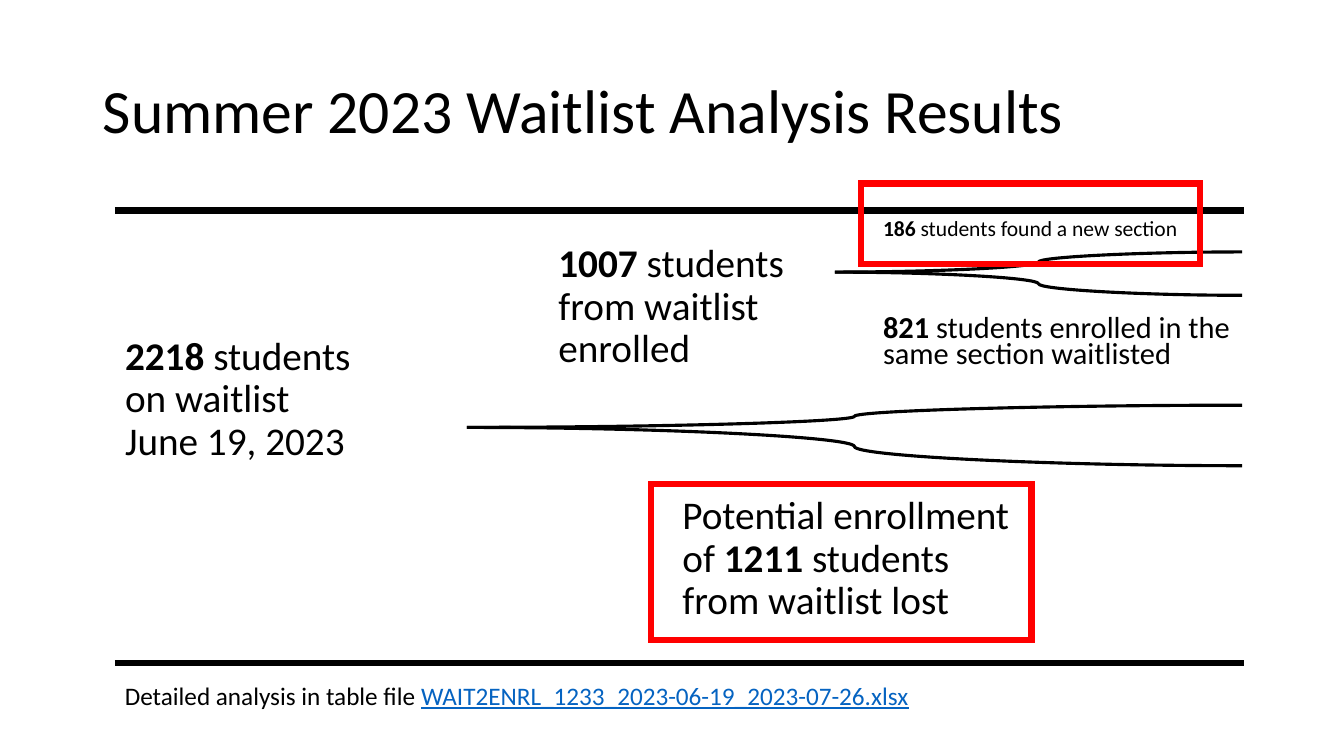
from lxml import etree
from pptx import Presentation
from pptx.dml.color import RGBColor
from pptx.enum.shapes import MSO_CONNECTOR, MSO_SHAPE
from pptx.enum.text import MSO_ANCHOR, MSO_AUTO_SIZE, PP_ALIGN
from pptx.oxml.ns import qn
from pptx.util import Inches, Pt

LINE, CURVE = MSO_CONNECTOR.STRAIGHT, MSO_CONNECTOR.CURVE
RECT = MSO_SHAPE.RECTANGLE
TOP, MIDDLE = MSO_ANCHOR.TOP, MSO_ANCHOR.MIDDLE
LEFT, FIXED = PP_ALIGN.LEFT, MSO_AUTO_SIZE.NONE
FONT = "Calibri"
COLORS = {"ink": "000000", "mark": "FF0000", "link": "0563C1"}


def color(name):
    return RGBColor.from_string(COLORS[name])


def apply(target, values):
    for name, value in values.items():
        setattr(target, name, value)


def place(shape, box):
    names = ("left", "top", "width", "height")
    apply(shape, dict(zip(names, map(Inches, box))))


def write(shape, runs, size, spacing=0.9, before=10, anchor=TOP):
    frame = shape.text_frame
    apply(frame, {"word_wrap": True, "auto_size": FIXED,
                  "vertical_anchor": anchor})
    para = frame.paragraphs[0]
    apply(para, {"alignment": LEFT, "line_spacing": spacing,
                 "space_before": Pt(before)})
    for text, style in runs:
        run = para.add_run()
        run.text = text
        apply(run.font, {"name": FONT, "size": Pt(size),
                         "bold": style == "bold",
                         "underline": style == "link"})
        run.font.color.rgb = color("link" if style == "link" else "ink")


def note(slide, box, runs, size, spacing=0.9, before=10):
    shape = slide.shapes.add_textbox(*map(Inches, box))
    write(shape, runs, size, spacing, before)


def stroke(slide, kind, start, end, weight):
    line = slide.shapes.add_connector(kind, *map(Inches, start + end))
    line.line.color.rgb = color("ink")
    line.line.width = Pt(weight)
    etree.SubElement(line._element.spPr, qn("a:effectLst"))


def fork(slide, box, split):
    left, top, width, height = box
    for end in (top, top + height):
        stroke(slide, CURVE, (left, top + split), (left + width, end), 2.25)


def mark(slide, box):
    frame = slide.shapes.add_shape(RECT, *map(Inches, box))
    frame.shadow.inherit = False
    frame.fill.background()
    frame.line.color.rgb = color("mark")
    frame.line.width = Pt(4.5)
    edge = frame._element.spPr.find(qn("a:ln"))
    etree.SubElement(edge, qn("a:miter")).set("lim", "800000")


def head(slide, box):
    title = slide.shapes.title
    place(title, box)
    write(title, [("Summer 2023 Waitlist Analysis Results", "plain")],
          44, before=0, anchor=MIDDLE)


def total(slide, box):
    body = slide.placeholders[1]
    place(body, box)
    write(body, [("2218 ", "bold"),
                 ("students on waitlist June 19, 2023", "plain")], 28)
    props = body.text_frame.paragraphs[0]._p.get_or_add_pPr()
    props.set("marL", "0")
    props.set("indent", "0")
    etree.SubElement(props, qn("a:buNone"))


def rules(slide, box):
    left, top, width, height = box
    for y in (top, top + height):
        stroke(slide, LINE, (left, y), (left + width, y), 4.5)


def gained(slide, box):
    left, top, width, height = box
    note(slide, (left, top + 0.22, 2.59, 1.46),
         [("1007 ", "bold"), ("students from waitlist enrolled", "plain")], 28)
    fork(slide, (left + 2.84, top + 0.35, width - 2.84, 0.43), 0.2)
    note(slide, (left + 3.22, top, 3.58, 0.36),
         [("186 ", "bold"), ("students found a new section", "plain")],
         15.4, 0.7)
    note(slide, (left + 3.22, top + height - 0.64, 3.66, 0.64),
         [("821 ", "bold"),
          ("students enrolled in the same section waitlisted", "plain")],
         21.7, 0.7)
    mark(slide, (left + 3.1, top - 0.33, 3.36, 0.8))


def lost(slide, box):
    left, top, width, height = box
    note(slide, (left + 0.21, top + 0.07, width - 0.22, height),
         [("Potential enrollment of ", "plain"), ("1211 ", "bold"),
          ("students from waitlist lost", "plain")], 28)
    mark(slide, box)


def foot(slide, box):
    note(slide, box,
         [("Detailed analysis in table file ", "plain"),
          ("WAIT2ENRL_1233_2023-06-19_2023-07-26.xlsx", "link")],
         18, 1.0, 0)


def main():
    deck = Presentation()
    apply(deck, {"slide_width": Inches(13.33), "slide_height": Inches(7.5)})
    slide = deck.slides.add_slide(deck.slide_layouts[1])
    head(slide, (0.92, 0.4, 11.5, 1.45))
    total(slide, (1.14, 3.29, 2.59, 1.46))
    rules(slide, (1.14, 2.09, 11.2, 4.49))
    fork(slide, (4.63, 4.02, 7.69, 0.6), 0.22)
    gained(slide, (5.44, 2.15, 6.88, 1.6))
    lost(slide, (6.46, 4.8, 3.77, 1.55))
    foot(slide, (1.14, 6.7, 9.44, 0.4))
    deck.save("out.pptx")


if __name__ == "__main__":
    main()
